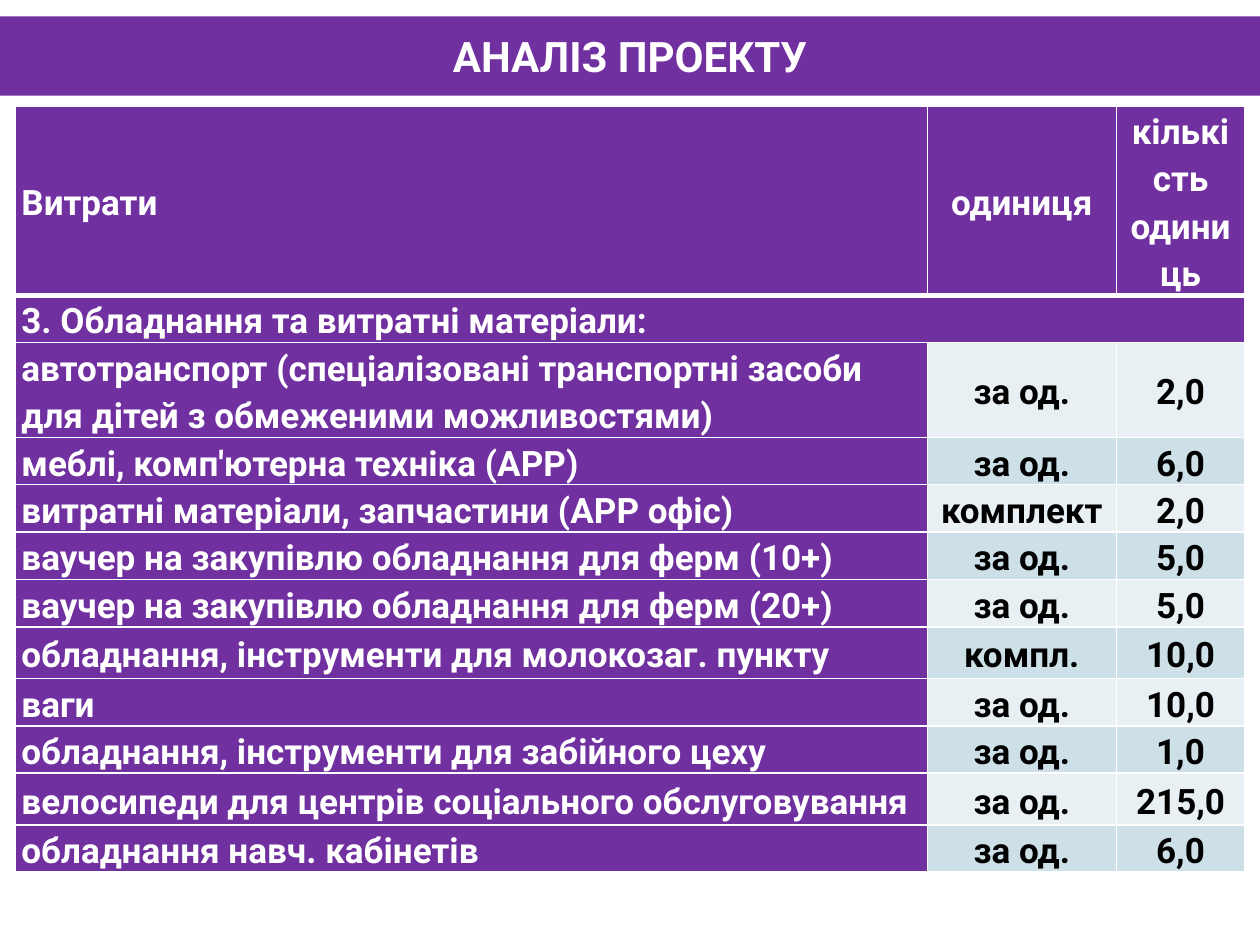
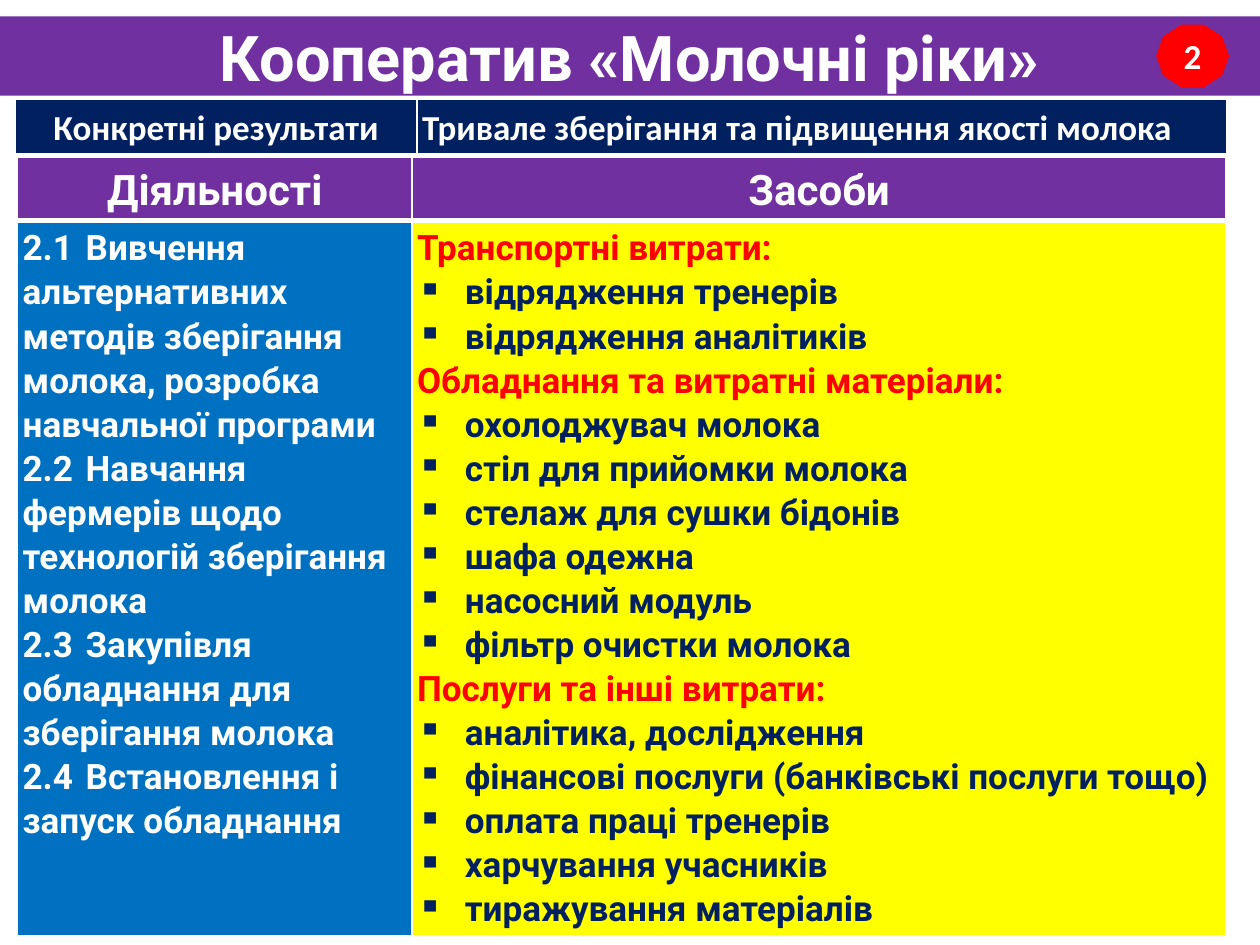
from lxml.etree import SubElement
from pptx import Presentation
from pptx.dml.color import RGBColor
from pptx.enum.shapes import MSO_SHAPE
from pptx.enum.text import MSO_ANCHOR, PP_ALIGN
from pptx.oxml.ns import qn
from pptx.util import Inches, Pt

PURPLE, NAVY, BLUE, RED = "7030A0", "002060", "0070C0", "FF0000"
YELLOW, WHITE, BLACK = "FFFF00", "FFFFFF", "000000"
BANDS = ("E8F0F4", "CDE0E8")

EXPENSE_HEADINGS = ("Витрати", "одиниця", "кількість одиниць")
EXPENSE_SECTION = "3. Обладнання та витратні матеріали:"
EXPENSES = (
    ("автотранспорт (спеціалізовані транспортні засоби для дітей з обмеженими можливостями)", "за од.", "2,0"),
    ("меблі, комп'ютерна техніка (АРР)", "за од.", "6,0"),
    ("витратні матеріали, запчастини (АРР офіс)", "комплект", "2,0"),
    ("ваучер на закупівлю обладнання для ферм (10+)", "за од.", "5,0"),
    ("ваучер на закупівлю обладнання для ферм (20+)", "за од.", "5,0"),
    ("обладнання, інструменти для молокозаг. пункту", "компл.", "10,0"),
    ("ваги", "за од.", "10,0"),
    ("обладнання, інструменти для забійного цеху", "за од.", "1,0"),
    ("велосипеди для центрів соціального обслуговування", "за од.", "215,0"),
    ("обладнання навч. кабінетів", "за од.", "6,0"),
)
EXPENSE_HEIGHTS = (1.49, 0.37, 0.75, 0.37, 0.37, 0.37, 0.37, 0.41, 0.37, 0.37, 0.41, 0.37)

ACTIVITIES = (
    "2.1\tВивчення альтернативних методів зберігання молока, розробка навчальної програми",
    "2.2\tНавчання фермерів щодо технологій зберігання молока",
    "2.3\tЗакупівля обладнання для зберігання молока",
    "2.4\tВстановлення і запуск обладнання",
)
MEANS = {
    "Транспортні витрати:": ("відрядження тренерів", "відрядження аналітиків"),
    "Обладнання та витратні матеріали:": (
        "охолоджувач молока", "стіл для прийомки молока", "стелаж для сушки бідонів",
        "шафа одежна", "насосний модуль", "фільтр очистки молока"),
    "Послуги та інші витрати:": (
        "аналітика, дослідження", "фінансові послуги (банківські послуги тощо)",
        "оплата праці тренерів", "харчування учасників", "тиражування матеріалів"),
}


def color(value):
    """Turn a hex string into a colour."""
    return RGBColor.from_string(value)


class Deck:
    """Holds the shared style and the current slide."""

    def __init__(self):
        """Start an empty 10 by 7.5 inch presentation."""
        self.presentation = Presentation()
        self.presentation.slide_width = Inches(10)
        self.presentation.slide_height = Inches(7.5)
        self.slide = None

    def add_slide(self, title, size):
        """Add a slide with the purple title band."""
        self.slide = self.presentation.slides.add_slide(self.presentation.slide_layouts[6])
        self.shape(MSO_SHAPE.RECTANGLE, (0, 0.13, 10, 0.63), PURPLE, title, size, "Roboto")

    def shape(self, kind, box, fill, text, size, font):
        """Draw a filled shape with centred white text."""
        shape = self.slide.shapes.add_shape(kind, *map(Inches, box))
        shape.shadow.inherit = False
        shape.fill.solid()
        shape.fill.fore_color.rgb = color(fill)
        shape.line.fill.background()
        shape.text_frame.vertical_anchor = MSO_ANCHOR.MIDDLE
        self.style_text(shape.text_frame.paragraphs[0], text, size, font, centered=True)
        return shape

    def badge(self, number):
        """Draw the red numbered decagon on the title band."""
        badge = self.shape(MSO_SHAPE.DECAGON, (9.19, 0.21, 0.55, 0.47), RED, number, 20, "Calibri")
        badge.line.color.rgb = color(RED)
        badge.line.width = Pt(2)

    def style_text(self, paragraph, text, size=20, font="Roboto", ink=WHITE, centered=False, spacing=None):
        """Fill and style one bold paragraph."""
        paragraph.text = text
        paragraph.alignment = PP_ALIGN.CENTER if centered else PP_ALIGN.LEFT
        paragraph.line_spacing = spacing
        paragraph.font.size = Pt(size)
        paragraph.font.name = font
        paragraph.font.bold = True
        paragraph.font.color.rgb = color(ink)

    def bullet(self, paragraph):
        """Give a paragraph a square bullet and a hanging indent."""
        properties = paragraph._p.get_or_add_pPr()
        properties.set("marL", str(Inches(0.38)))
        properties.set("indent", str(-Inches(0.38)))
        character = SubElement(properties, qn("a:buChar"), char="▪")
        properties.find(qn("a:defRPr")).addprevious(character)

    def table(self, left, top, widths, heights):
        """Add an unbanded table from column widths and row heights."""
        frame = self.slide.shapes.add_table(
            len(heights), len(widths), Inches(left), Inches(top),
            Inches(sum(widths)), Inches(sum(heights)))
        table = frame.table
        table.first_row = table.horz_banding = False
        for column, width in zip(table.columns, widths):
            column.width = Inches(width)
        for row, height in zip(table.rows, heights):
            row.height = Inches(height)
        return table

    def cell(self, cell, fill, margins, top=1, bottom=1, anchor=MSO_ANCHOR.MIDDLE):
        """Set a cell's white borders, fill, margins and anchor."""
        properties = cell._tc.get_or_add_tcPr()
        for side, width in (("L", 1), ("R", 1), ("T", top), ("B", bottom)):
            line = SubElement(properties, qn(f"a:ln{side}"), w=str(Pt(width)))
            SubElement(SubElement(line, qn("a:solidFill")), qn("a:srgbClr"), val=WHITE)
        cell.fill.solid()
        cell.fill.fore_color.rgb = color(fill)
        cell.margin_left = cell.margin_right = Inches(margins[0])
        cell.margin_top = cell.margin_bottom = Inches(margins[1])
        cell.vertical_anchor = anchor

    def text_cell(self, cell, text, fill, margins=(0.04, 0.04), top=1, bottom=1, spacing=1.07, **style):
        """Fill a cell with a single paragraph."""
        self.cell(cell, fill, margins, top, bottom)
        self.style_text(cell.text_frame.paragraphs[0], text, spacing=spacing, **style)

    def list_cell(self, cell, entries, fill):
        """Fill a cell with (text, ink, bulleted) paragraphs."""
        self.cell(cell, fill, (0.04, 0.04), top=3, anchor=MSO_ANCHOR.TOP)
        frame = cell.text_frame
        for index, (text, ink, bulleted) in enumerate(entries):
            paragraph = frame.add_paragraph() if index else frame.paragraphs[0]
            self.style_text(paragraph, text, ink=ink, spacing=1.07)
            if bulleted:
                self.bullet(paragraph)


def add_expenses(deck):
    """Build the slide with the expense table."""
    deck.add_slide("АНАЛІЗ ПРОЕКТУ", 24)
    table = deck.table(0.12, 0.84, (7.24, 1.5, 1.02), EXPENSE_HEIGHTS)
    rows = (EXPENSE_HEADINGS, (EXPENSE_SECTION, "", ""), *EXPENSES)
    for row, texts in enumerate(rows):
        for column, text in enumerate(texts):
            is_value = row > 1 and column > 0
            deck.text_cell(
                table.cell(row, column), text, BANDS[row % 2] if is_value else PURPLE,
                margins=(0.05, 0), top=3 if row == 1 else 1, bottom=1 if row else 3, spacing=1.15,
                ink=BLACK if is_value else WHITE, centered=column > 0)
    table.cell(1, 0).merge(table.cell(1, 2))


def add_cooperative(deck):
    """Build the slide with the activities and means of the cooperative."""
    deck.add_slide("Кооператив «Молочні ріки»", 36)
    result = deck.table(0.12, 0.79, (3.19, 6.43), (0.44,))
    for column, text in enumerate(("Конкретні результати", "Тривале зберігання та підвищення якості молока")):
        deck.text_cell(result.cell(0, column), text, NAVY, bottom=3, font="Calibri", centered=column == 0)

    plan = deck.table(0.14, 1.25, (3.13, 6.46), (0.5, 5.66))
    for column, text in enumerate(("Діяльності", "Засоби")):
        deck.text_cell(plan.cell(0, column), text, PURPLE, bottom=3, size=24, centered=True)
    deck.list_cell(plan.cell(1, 0), [(text, WHITE, False) for text in ACTIVITIES], BLUE)
    means = []
    for heading, items in MEANS.items():
        means.append((heading, RED, False))
        means.extend((item, NAVY, True) for item in items)
    deck.list_cell(plan.cell(1, 1), means, YELLOW)
    deck.badge("2")


def main():
    """Build and save both slides."""
    deck = Deck()
    add_expenses(deck)
    add_cooperative(deck)
    deck.presentation.save("out.pptx")


if __name__ == "__main__":
    main()
